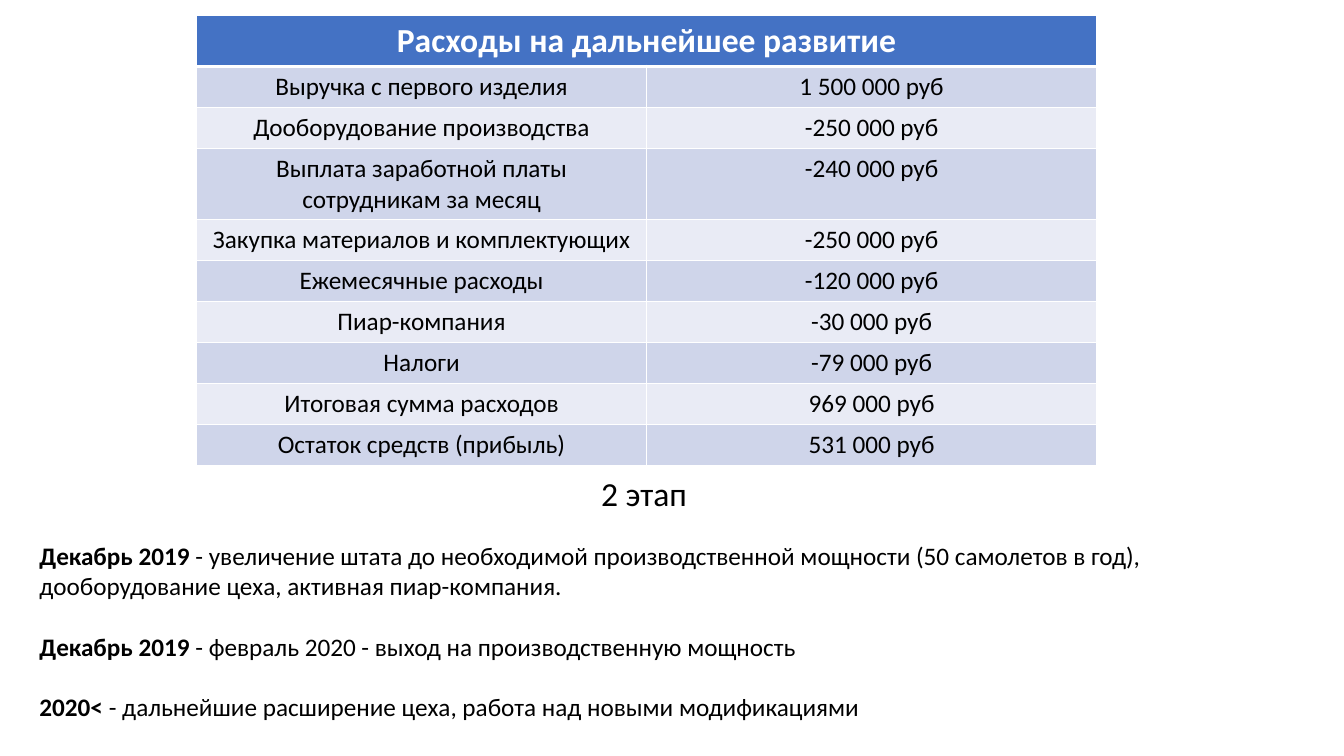
"""Build the slide with the development costs table and the stage 2 plan."""
import pptx
import pptx.util
import pptx.dml.color
import pptx.enum.text
import pptx.oxml
import pptx.oxml.ns

Pt = pptx.util.Pt
RGBColor = pptx.dml.color.RGBColor
PP_ALIGN = pptx.enum.text.PP_ALIGN
MSO_ANCHOR = pptx.enum.text.MSO_ANCHOR

HEADER = "Расходы на дальнейшее развитие"
COSTS = [
    ("Выручка с первого изделия", "1 500 000 руб"),
    ("Дооборудование производства", "-250 000 руб"),
    ("Выплата заработной платы сотрудникам за месяц", "-240 000 руб"),
    ("Закупка материалов и комплектующих", "-250 000 руб"),
    ("Ежемесячные расходы", "-120 000 руб"),
    ("Пиар-компания", "-30 000 руб"),
    ("Налоги", "-79 000 руб"),
    ("Итоговая сумма расходов", "969 000 руб"),
    ("Остаток средств (прибыль)", "531 000 руб"),
]
STAGE = "2 этап"
PLAN = [
    ("Декабрь 2019 ", "- увеличение штата до необходимой производственной мощности "
     "(50 самолетов в год), дооборудование цеха, активная пиар-компания."),
    ("Декабрь 2019", " - февраль 2020 - выход на производственную мощность"),
    ("2020<", " - дальнейшие расширение цеха, работа над новыми модификациями"),
]

FONT = "Calibri"
BLACK = RGBColor(0x00, 0x00, 0x00)
WHITE = RGBColor(0xFF, 0xFF, 0xFF)
BLUE = RGBColor(0x44, 0x72, 0xC4)
BANDS = [RGBColor(0xCF, 0xD5, 0xEA), RGBColor(0xE9, 0xEB, 0xF5)]
HEADER_H, ROW_H, TALL_H, TALL_ROW = 36, 29.2, 50.6, 3
COL_W = 321.5


def add_run(p, text, size, color=BLACK, bold=False):
    r = p.add_run()
    r.text = text
    r.font.name = FONT
    r.font.size = Pt(size)
    r.font.bold = bold
    r.font.color.rgb = color


def set_borders(cell, top, bottom):
    tcPr = cell._tc.get_or_add_tcPr()
    for side, width in (("L", 1), ("R", 1), ("T", top), ("B", bottom)):
        tcPr.append(pptx.oxml.parse_xml(
            f'<a:ln{side} {pptx.oxml.ns.nsdecls("a")} w="{Pt(width)}">'
            f'<a:solidFill><a:srgbClr val="{WHITE}"/></a:solidFill></a:ln{side}>'))


def fill_cell(cell, text, size, color, bold, fill):
    cell.fill.solid()
    cell.fill.fore_color.rgb = fill
    p = cell.text_frame.paragraphs[0]
    p.alignment = PP_ALIGN.CENTER
    add_run(p, text, size, color, bold)


def place(sp, left, top, width, height):
    sp.left, sp.top, sp.width, sp.height = Pt(left), Pt(top), Pt(width), Pt(height)
    tf = sp.text_frame
    tf.word_wrap = True
    tf.auto_size = pptx.enum.text.MSO_AUTO_SIZE.NONE
    tf.vertical_anchor = MSO_ANCHOR.TOP
    return tf


def add_costs(s):
    heights = [HEADER_H] + [ROW_H] * len(COSTS)
    heights[TALL_ROW] = TALL_H
    table = s.shapes.add_table(len(heights), 2, Pt(140.4), Pt(11),
                               Pt(2 * COL_W), Pt(sum(heights))).table
    for col in table.columns:
        col.width = Pt(COL_W)
    for i, height in enumerate(heights):
        table.rows[i].height = Pt(height)
        for cell in table.rows[i].cells:
            set_borders(cell, 3 if i == 1 else 1, 3 if i == 0 else 1)
    table.cell(0, 0).merge(table.cell(0, 1))
    fill_cell(table.cell(0, 0), HEADER, 24, WHITE, True, BLUE)
    for i, row in enumerate(COSTS):
        for j, text in enumerate(row):
            fill_cell(table.cell(i + 1, j), text, 18, BLACK, False, BANDS[i % 2])


def add_plan(s):
    p = place(s.shapes.title, 352, 334, 216, 36).paragraphs[0]
    p.alignment = PP_ALIGN.CENTER
    add_run(p, STAGE, 24)
    tf = place(s.placeholders[1], 21, 382.3, 929.5, 138.5)
    for i, (date, text) in enumerate(PLAN):
        p = tf.add_paragraph() if i else tf.paragraphs[0]
        p.alignment = PP_ALIGN.LEFT
        p.line_spacing = 1.0
        p.space_before = Pt(21.6 if i else 0)
        pPr = p._p.get_or_add_pPr()
        pPr.set("marL", "0")
        pPr.set("indent", "0")
        pPr.append(pptx.oxml.parse_xml(f'<a:buNone {pptx.oxml.ns.nsdecls("a")}/>'))
        add_run(p, date, 18, bold=True)
        add_run(p, text, 18)


def main():
    prs = pptx.Presentation()
    prs.slide_width, prs.slide_height = Pt(960), Pt(540)
    s = prs.slides.add_slide(prs.slide_layouts[1])
    add_costs(s)
    add_plan(s)
    prs.save("out.pptx")


if __name__ == "__main__":
    main()
